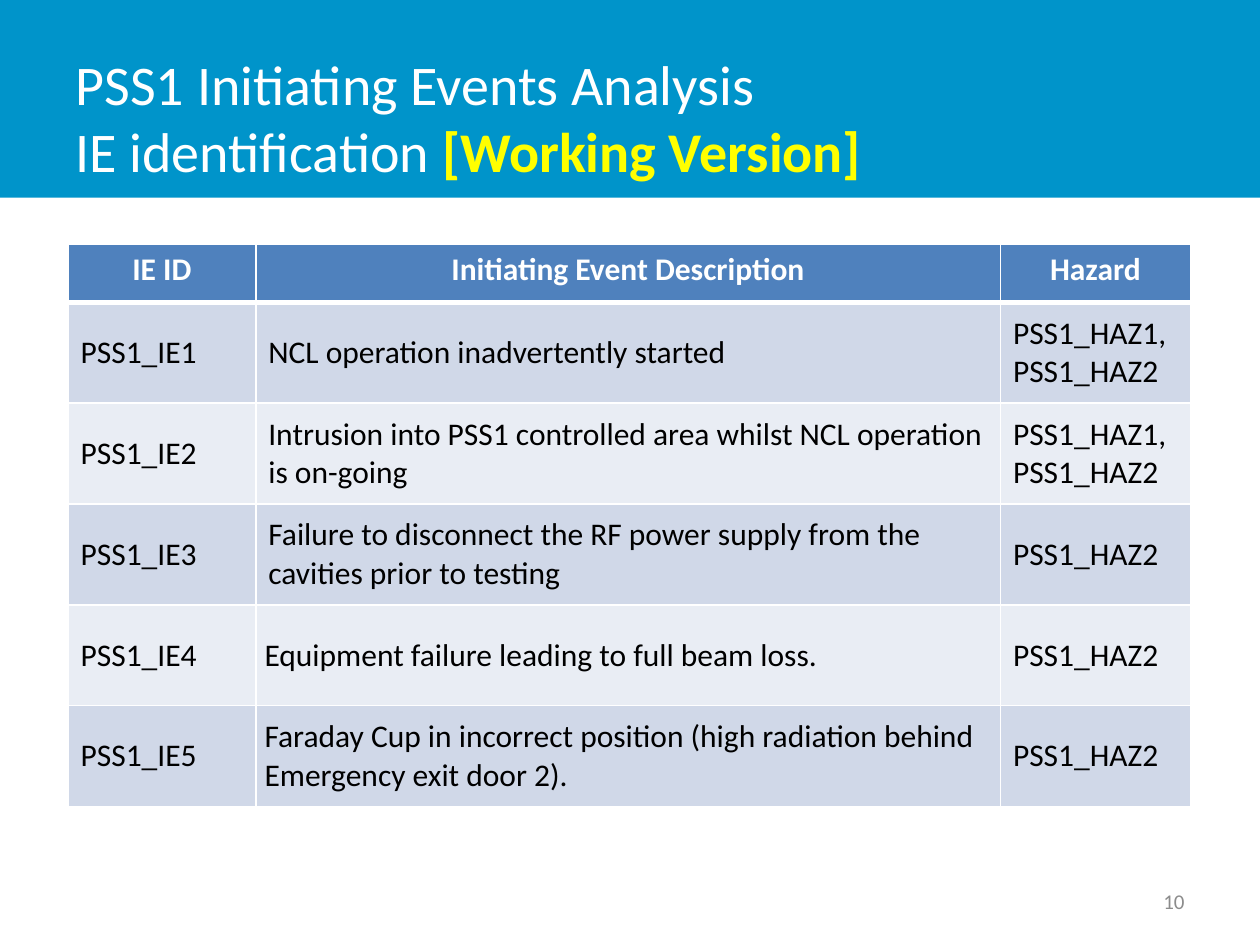
import pptx
import pptx.dml.color
import pptx.enum.shapes
import pptx.enum.text
import pptx.oxml
import pptx.oxml.ns
import pptx.util
from pptx.util import Inches

ALIGN = pptx.enum.text.PP_ALIGN
ANCHOR = pptx.enum.text.MSO_ANCHOR
COLORS = {
    "band": "0094CA", "white": "FFFFFF", "yellow": "FFFF00", "black": "000000",
    "number": "8C8C8C", "header": "4F81BD", "odd": "D0D8E8", "even": "E9EDF4",
}
HEADER = ["IE ID", "Initiating Event Description", "Hazard"]
EVENTS = [
    ("NCL operation inadvertently started", "PSS1_HAZ1, PSS1_HAZ2"),
    ("Intrusion into PSS1 controlled area whilst NCL operation is on-going",
     "PSS1_HAZ1, PSS1_HAZ2"),
    ("Failure to disconnect the RF power supply from the cavities prior to testing",
     "PSS1_HAZ2"),
    ("Equipment failure leading to full beam loss.", "PSS1_HAZ2"),
    ("Faraday Cup in incorrect position (high radiation behind Emergency exit door 2).",
     "PSS1_HAZ2"),
]
COLUMN_WIDTHS = [1.49, 5.91, 1.51]
HEADER_HEIGHT = 0.46
NARROW_ROWS = (4, 5)


def rgb(name):
    return pptx.dml.color.RGBColor.from_string(COLORS[name])


def add_text(p, text, size=18, color="black", bold=False, align=ALIGN.LEFT):
    p.alignment = align
    r = p.add_run()
    r.text = text
    r.font.name = "Calibri"
    r.font.size = pptx.util.Pt(size)
    r.font.bold = bold
    r.font.color.rgb = rgb(color)


def set_border(cell, side, width):
    ns = pptx.oxml.ns.nsdecls("a")
    cell._tc.get_or_add_tcPr().append(pptx.oxml.parse_xml(
        f'<a:ln{side} {ns} w="{pptx.util.Pt(width)}"><a:solidFill>'
        f'<a:srgbClr val="{COLORS["white"]}"/></a:solidFill></a:ln{side}>'))


def add_heading(s, left, top, width, height):
    band = s.shapes.add_shape(pptx.enum.shapes.MSO_SHAPE.RECTANGLE,
                              left, top, width, height)
    band.shadow.inherit = False
    band.fill.solid()
    band.fill.fore_color.rgb = rgb("band")
    band.line.fill.background()

    title = s.shapes.title
    s.shapes._spTree.append(title._element)
    title.left, title.top = left + Inches(0.5), top + Inches(0.3)
    title.width, title.height = Inches(7.81), Inches(1.25)
    tf = title.text_frame
    tf.auto_size = pptx.enum.text.MSO_AUTO_SIZE.NONE
    tf.vertical_anchor = ANCHOR.MIDDLE
    p = tf.paragraphs[0]
    add_text(p, "PSS1 Initiating Events Analysis", size=32, color="white")
    p.add_line_break()
    add_text(p, "IE identification ", size=32, color="white")
    add_text(p, "[Working Version]", size=32, color="yellow", bold=True)


def add_event_table(s, left, top, width, height):
    rows = [HEADER] + [(f"PSS1_IE{n}", *event) for n, event in enumerate(EVENTS, 1)]
    table = s.shapes.add_table(len(rows), len(HEADER), left, top, width, height).table
    for column, column_width in zip(table.columns, COLUMN_WIDTHS):
        column.width = Inches(column_width)
    body_height = (height - Inches(HEADER_HEIGHT)) // len(EVENTS)
    for i, row in enumerate(rows):
        header = i == 0
        table.rows[i].height = Inches(HEADER_HEIGHT) if header else body_height
        fill = "header" if header else ("even", "odd")[i % 2]
        for j, text in enumerate(row):
            cell = table.cell(i, j)
            for side in "LRTB":
                thick = (i, side) in ((0, "B"), (1, "T"))
                set_border(cell, side, 3 if thick else 1)
            cell.fill.solid()
            cell.fill.fore_color.rgb = rgb(fill)
            cell.vertical_anchor = ANCHOR.TOP if header else ANCHOR.MIDDLE
            if j == 1 and i in NARROW_ROWS:
                cell.margin_left = cell.margin_right = Inches(0.07)
                cell.margin_top = cell.margin_bottom = 0
            add_text(cell.text_frame.paragraphs[0], text, bold=header,
                     color="white" if header else "black",
                     align=ALIGN.CENTER if header else ALIGN.LEFT)


def add_page_number(s, left, top, width, height):
    tf = s.shapes.add_textbox(left, top, width, height).text_frame
    tf.word_wrap = True
    tf.vertical_anchor = ANCHOR.MIDDLE
    add_text(tf.paragraphs[0], "10", size=12, color="number", align=ALIGN.RIGHT)


def main():
    prs = pptx.Presentation()
    prs.slide_width, prs.slide_height = Inches(10), Inches(7.5)
    s = prs.slides.add_slide(prs.slide_layouts[5])
    add_heading(s, 0, 0, prs.slide_width, Inches(1.57))
    add_page_number(s, Inches(7.17), Inches(6.95), Inches(2.33), Inches(0.4))
    add_event_table(s, Inches(0.54), Inches(1.94),
                    Inches(sum(COLUMN_WIDTHS)), Inches(4.46))
    prs.save("out.pptx")


if __name__ == "__main__":
    main()
